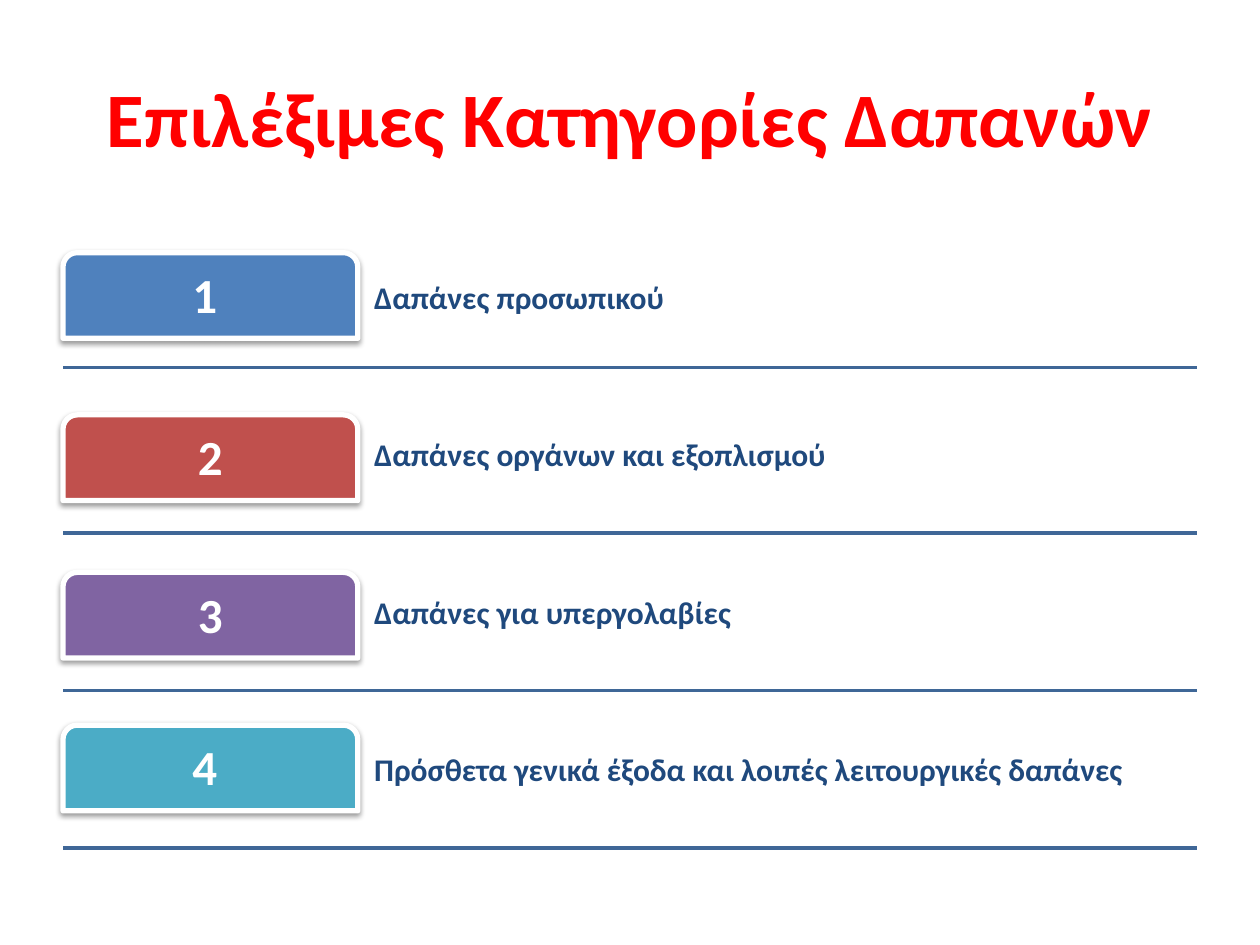
from dataclasses import dataclass

from lxml.etree import SubElement
from pptx import Presentation
from pptx.dml.color import RGBColor
from pptx.enum.shapes import MSO_CONNECTOR as Connector, MSO_SHAPE as Preset
from pptx.enum.text import MSO_ANCHOR as Anchor, PP_ALIGN as Align
from pptx.oxml.ns import qn
from pptx.util import Inches, Pt

RED = RGBColor(0xFF, 0x00, 0x00)
WHITE = RGBColor(0xFF, 0xFF, 0xFF)
NAVY = RGBColor(0x1F, 0x49, 0x7D)
RULE_BLUE = RGBColor(0x3F, 0x67, 0x97)
BLUE = RGBColor(0x4F, 0x81, 0xBD)
BRICK = RGBColor(0xC0, 0x50, 0x4D)
PURPLE = RGBColor(0x80, 0x64, 0xA2)
TEAL = RGBColor(0x4B, 0xAC, 0xC6)

WIDTH, HEIGHT = Inches(10), Inches(7.5)
MARGIN = WIDTH * 0.05
CONTENT = WIDTH - 2 * MARGIN
TAB_WIDTH = CONTENT * 0.26
FIRST_ROW = Inches(1.78)
ROW = Inches(1.25)


@dataclass(frozen=True)
class Expense:
    number: str
    label: str
    color: RGBColor
    tab_share: float = 0.21
    rule_share: float = 0.96


EXPENSES = [
    Expense("1 ", "Δαπάνες προσωπικού", BLUE, tab_share=0.18, rule_share=0.91),
    Expense("2", "Δαπάνες οργάνων και εξοπλισμού", BRICK),
    Expense("3", "Δαπάνες για υπεργολαβίες", PURPLE),
    Expense("4 ", "Πρόσθετα γενικά έξοδα και λοιπές λειτουργικές δαπάνες", TEAL, tab_share=0.18),
]


def write(shape, text: str, *, size: float, color: RGBColor, align=Align.LEFT,
          inset: float = 0.04, indent: float = 0, spacing: float = 0.9) -> None:
    frame = shape.text_frame
    frame.word_wrap = True
    frame.vertical_anchor = Anchor.MIDDLE
    frame.margin_left = Inches(inset + indent)
    frame.margin_right = frame.margin_top = frame.margin_bottom = Inches(inset)
    paragraph = frame.paragraphs[0]
    paragraph.alignment = align
    paragraph.line_spacing = spacing
    run = paragraph.add_run()
    run.text = text
    run.font.name = "Calibri"
    run.font.size = Pt(size)
    run.font.bold = True
    run.font.color.rgb = color


def add_box(slide, left: float, top: float, width: float, height: float):
    return slide.shapes.add_textbox(*map(int, (left, top, width, height)))


def add_rule(slide, y: float) -> None:
    rule = slide.shapes.add_connector(
        Connector.STRAIGHT, int(MARGIN), int(y), int(MARGIN + CONTENT), int(y))
    rule.line.color.rgb = RULE_BLUE
    rule.line.width = Pt(2)
    SubElement(rule._element.spPr, qn("a:effectLst"))


def add_shadow(shape) -> None:
    shape.shadow.inherit = False
    effects = shape._element.spPr.find(qn("a:effectLst"))
    shadow = SubElement(effects, qn("a:outerShdw"), blurRad=str(Pt(3.1)),
                        dist=str(Pt(1.6)), dir="5400000", rotWithShape="0")
    black = SubElement(shadow, qn("a:srgbClr"), val="000000")
    SubElement(black, qn("a:alpha"), val="38000")


def add_tab(slide, expense: Expense, top: float) -> None:
    tab = slide.shapes.add_shape(
        Preset.ROUND_2_SAME_RECTANGLE, int(MARGIN), int(top), int(TAB_WIDTH), Inches(0.68))
    tab.adjustments[0] = 0.167
    tab.adjustments[1] = 0
    tab.fill.solid()
    tab.fill.fore_color.rgb = expense.color
    tab.line.color.rgb = WHITE
    tab.line.width = Pt(3)
    add_shadow(tab)
    write(tab, expense.number, size=28, color=WHITE, align=Align.CENTER, inset=0.06)


def add_expense(slide, index: int, expense: Expense) -> None:
    top = FIRST_ROW + index * ROW
    add_rule(slide, top + expense.rule_share * ROW)
    label = add_box(slide, MARGIN + TAB_WIDTH, top, CONTENT - TAB_WIDTH, ROW * 0.95)
    write(label, expense.label, size=18, color=NAVY, indent=0.09)
    add_tab(slide, expense, top + expense.tab_share * ROW)


def main() -> None:
    deck = Presentation()
    deck.slide_width, deck.slide_height = WIDTH, HEIGHT
    slide = deck.slides.add_slide(deck.slide_layouts[6])
    title = add_box(slide, MARGIN, HEIGHT * 0.04, CONTENT, ROW)
    write(title, "Επιλέξιμες Κατηγορίες Δαπανών", size=44, color=RED,
          align=Align.CENTER, spacing=1.0)
    for index, expense in enumerate(EXPENSES):
        add_expense(slide, index, expense)
    deck.save("out.pptx")


if __name__ == "__main__":
    main()
